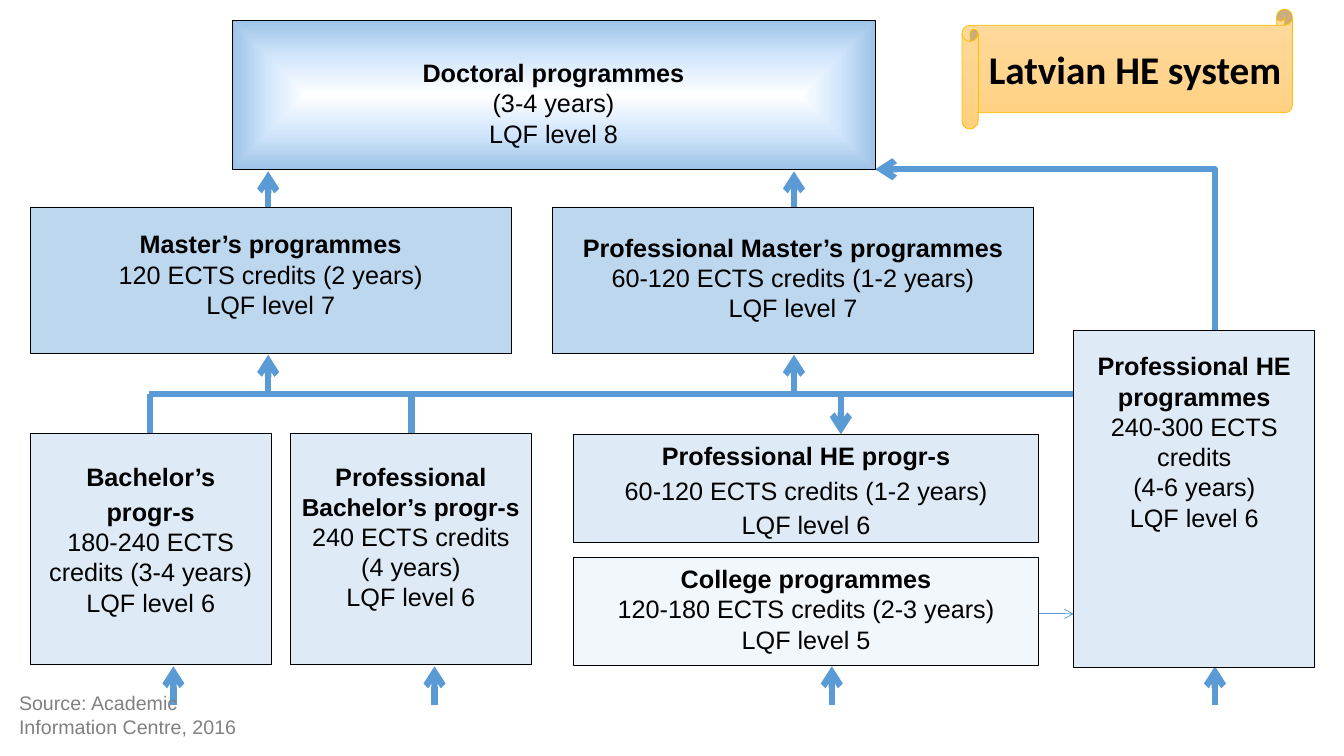
from pptx import Presentation
from pptx import util as u
from pptx.dml.color import RGBColor
from pptx.enum import shapes, text
from pptx.oxml import parse_xml
from pptx.oxml.ns import nsdecls, qn
from lxml import etree

HUES = {
    "ink": "000000", "note": "808080", "flow": "5B9BD5", "gold": "FFC000",
    "master": "BDD7EE", "bachelor": "DEEBF7", "college": "F2F7FC",
}
GLOW = ["FFFFFF", "D3E7FC", "9DC3E6"]
SCROLL = ["FFDB9E", "FFD590", "FFD07C"]
CENTRE = '<a:path path="rect"><a:fillToRect l="50000" t="50000" r="50000" b="50000"/></a:path>'
DOWN = '<a:lin ang="5400000" scaled="0"/>'
COLS, ROWS = 133.3, 75
CELL = u.Inches(0.1)

deck = Presentation()
deck.slide_width = round(COLS * CELL)
deck.slide_height = ROWS * CELL
slide = deck.slides.add_slide(deck.slide_layouts[6])


def hue(name):
    return RGBColor.from_string(HUES[name])


def cells(*nums):
    return [round(n * CELL) for n in nums]


def blend(shape, stops, way):
    marks = "".join(
        f'<a:gs pos="{i * 50000}"><a:srgbClr val="{c}"/></a:gs>' for i, c in enumerate(stops))
    shape._element.spPr.append(parse_xml(
        f'<a:gradFill {nsdecls("a")}><a:gsLst>{marks}</a:gsLst>{way}</a:gradFill>'))


def edge(shape, name):
    shape.line.color.rgb = hue(name)
    shape.line.width = u.Pt(0.5)
    shape.shadow.inherit = False


def style(para, size, bold=False, name="ink", face="Arial"):
    for run in para.runs:
        run.font.size = u.Pt(size)
        run.font.bold = bold
        run.font.name = face
        run.font.color.rgb = hue(name)


def card(box, lines, top, fill=None, heads=1, gaps=()):
    shape = slide.shapes.add_shape(shapes.MSO_SHAPE.RECTANGLE, *cells(*box))
    if fill:
        shape.fill.solid()
        shape.fill.fore_color.rgb = hue(fill)
    else:
        blend(shape, GLOW, CENTRE)
    edge(shape, "ink")
    frame = shape.text_frame
    frame.word_wrap = True
    frame.vertical_anchor = text.MSO_ANCHOR.TOP
    frame.margin_left = frame.margin_right = u.Inches(0.05)
    frame.margin_top = round(top * CELL)
    frame.text = "\n".join(lines)
    for i, para in enumerate(frame.paragraphs):
        para.alignment = text.PP_ALIGN.CENTER
        para.space_before = u.Pt(3 if i in gaps else 0)
        style(para, 18, i < heads)
    return frame


def link(x1, y1, x2, y2, tip=True, width=4.5, bend=None):
    kind = shapes.MSO_CONNECTOR.STRAIGHT if bend is None else shapes.MSO_CONNECTOR.ELBOW
    wire = slide.shapes.add_connector(kind, *cells(x1, y1, x2, y2))
    wire.line.color.rgb = hue("flow")
    wire.line.width = u.Pt(width)
    props = wire._element.spPr
    if tip:
        etree.SubElement(props.find(qn("a:ln")), qn("a:tailEnd"), type="arrow")
    if bend is not None:
        guides = props.find(qn("a:prstGeom")).get_or_add_avLst()
        etree.SubElement(guides, qn("a:gd"), name="adj1", fmla=f"val {round(bend * 100000)}")
    etree.SubElement(props, qn("a:effectLst"))


def flows(box):
    x, y, w, h = box
    bus = y + 39.1
    link(x + 124.9, y + 49.1, x + 83.8, y + 16.8, bend=0.18)
    link(x + 11.8, bus, x + 103.5, bus, tip=False)
    for col in (23.6, 75.75):
        for low in (20.8, 39):
            link(x + col, y + low, x + col, y + low - 3.8)
    for col, tip in ((11.9, False), (37.8, False), (80.4, True)):
        link(x + col, bus, x + col, y + 43.1, tip)
    for col in (14.2, 40.1, 79.5, 117.5):
        link(x + col, y + h, x + col, y + h - 3.8)
    link(x + 89.9, y + 60.9, x + 103.5, y + 60.9, width=0.5)


def doctors(box):
    card(box, ["Doctoral programmes", "(3-4 years)", "LQF level 8"], 3.7)


def masters(box):
    x, y, w, h = box
    wide = 47.7
    card((x, y, wide, h),
         ["Master’s programmes", "120 ECTS credits (2 years)", "LQF level 7"], 2.1, "master")
    card((x + w - wide, y, wide, h),
         ["Professional Master’s programmes", "60-120 ECTS credits (1-2 years)", "LQF level 7"],
         2.4, "master")


def bachelors(box):
    x, y, w, h = box
    wide = 23.9
    card((x, y, wide, h),
         ["Bachelor’s", "progr-s", "180-240 ECTS credits (3-4 years)", "LQF level 6"],
         2.8, "bachelor", 2, (1,))
    frame = card((x + w - wide, y, wide, h),
                 ["Professional", "Bachelor’s progr-s", "240 ECTS credits", "(4 years)", "LQF level 6"],
                 2.8, "bachelor", 2)
    style(frame.paragraphs[1], 17.5, True)


def colleges(box):
    x, y, w, h = box
    high = 10.7
    card((x, y, w, high),
         ["Professional HE progr-s", "60-120 ECTS credits (1-2 years)", "LQF level 6"],
         0.6, "bachelor", gaps=(1, 2))
    card((x, y + h - high, w, high),
         ["College programmes", "120-180 ECTS credits (2-3 years)", "LQF level 5"], 0.6, "college")


def long(box):
    card(box, ["Professional HE", "programmes", "240-300 ECTS credits", "(4-6 years)", "LQF level 6"],
         2, "bachelor", 2)


def label(box, words, anchor):
    frame = slide.shapes.add_textbox(*cells(*box)).text_frame
    frame.word_wrap = True
    frame.vertical_anchor = anchor
    frame.text = words
    return frame.paragraphs[0]


def banner(box):
    x, y, w, h = box
    shape = slide.shapes.add_shape(shapes.MSO_SHAPE.HORIZONTAL_SCROLL, *cells(*box))
    shape.adjustments[0] = 0.135
    blend(shape, SCROLL, DOWN)
    edge(shape, "gold")
    title = label((x + 1.7, y + 4.1, w + 2.5, 4.3), "Latvian HE system", text.MSO_ANCHOR.MIDDLE)
    title.line_spacing = 0.9
    style(title, 28, True, face="Calibri")


def source(box):
    style(label(box, "Source: Academic Information Centre, 2016", text.MSO_ANCHOR.TOP), 14, name="note")


def main():
    flows((3, 0, 127.4, 69.9))
    doctors((23, 2, 63.8, 14.8))
    masters((3, 20.6, 99.5, 14.5))
    bachelors((3, 43, 49.7, 22.9))
    colleges((56.9, 43.1, 46.1, 22.9))
    long((106.5, 32.8, 23.9, 33.4))
    source((0.9, 68.1, 25.2, 5.7))
    banner((95.4, 0.9, 32.8, 11.9))
    deck.save("out.pptx")


if __name__ == "__main__":
    main()
